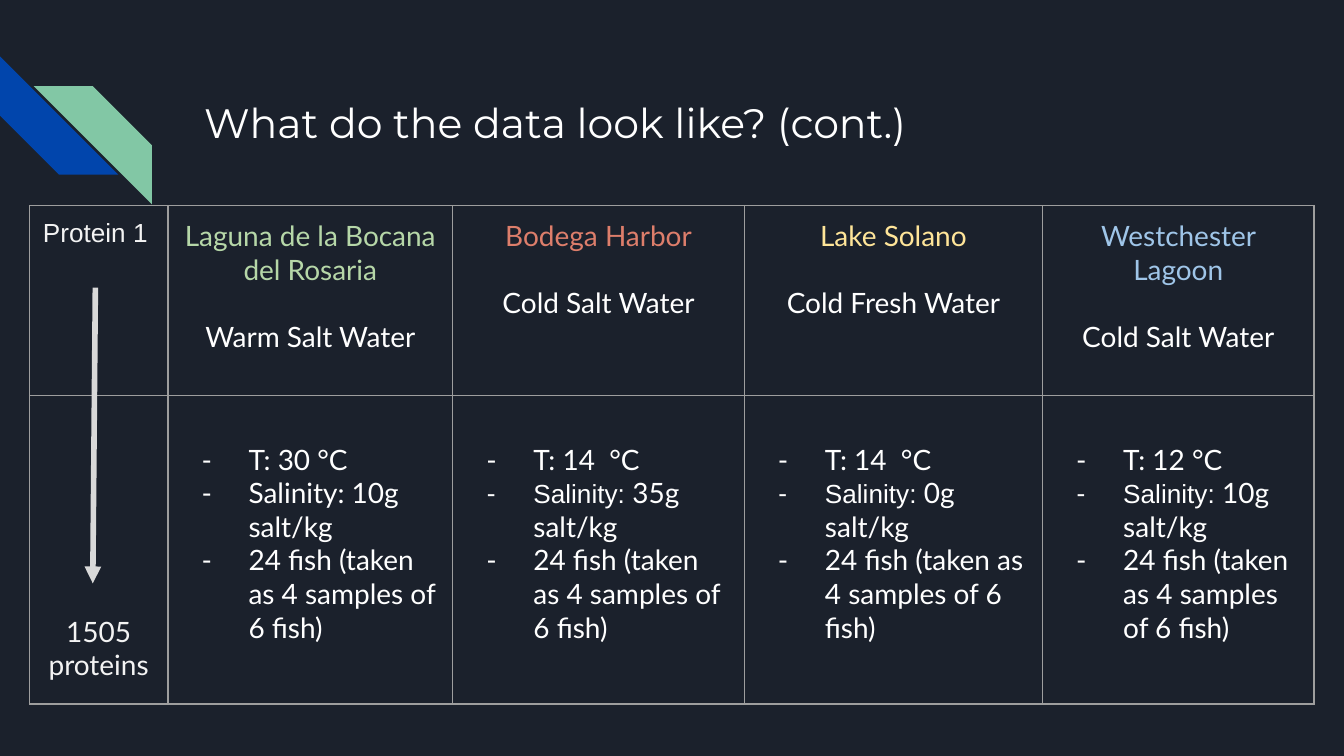
from lxml.etree import SubElement
from pptx import Presentation
from pptx.dml.color import RGBColor
from pptx.enum.shapes import MSO_CONNECTOR as Connector, MSO_SHAPE as Shape
from pptx.enum.text import MSO_ANCHOR as Anchor, MSO_AUTO_SIZE as AutoSize, PP_ALIGN as Align
from pptx.oxml import parse_xml
from pptx.oxml.ns import nsdecls, qn
from pptx.util import Pt

NAVY = RGBColor(0x1B, 0x21, 0x2C)
BLUE = RGBColor(0x01, 0x45, 0xAC)
MINT = RGBColor(0x82, 0xC7, 0xA5)
WHITE = RGBColor(0xFF, 0xFF, 0xFF)
PALE = RGBColor(0xF3, 0xF3, 0xF3)
SILVER = RGBColor(0xD9, 0xD9, 0xD9)
BORDER = RGBColor(0x9E, 0x9E, 0x9E)
GREEN = RGBColor(0xB6, 0xD7, 0xA8)
CORAL = RGBColor(0xDD, 0x7E, 0x6B)
YELLOW = RGBColor(0xFF, 0xE5, 0x99)
SKY = RGBColor(0x9F, 0xC5, 0xE8)

LATO, ARIAL = ("Lato", 15), ("Arial", 14)
TITLE = "What do the data look like? (cont.)"
FIRST_PROTEIN = "Protein 1"
LAST_PROTEIN = "1505 proteins"
SAMPLING = "24 fish (taken as 4 samples of 6 fish)"
SITES = [
    ("Laguna de la Bocana del Rosaria", GREEN, "Warm Salt Water", "T: 30 °C",
     [("Salinity: 10g salt/kg", LATO)]),
    ("Bodega Harbor", CORAL, "Cold Salt Water", "T: 14  °C",
     [("Salinity: ", ARIAL), ("35g salt/kg", LATO)]),
    ("Lake Solano", YELLOW, "Cold Fresh Water", "T: 14  °C",
     [("Salinity:", ARIAL), (" 0g salt/kg", LATO)]),
    ("Westchester Lagoon", SKY, "Cold Salt Water", "T: 12 °C",
     [("Salinity:", ARIAL), (" 10g salt/kg", LATO)]),
]
COLUMN_WIDTHS = [74.2, 152.6, 156.2, 159.8, 145.4]
ROW_HEIGHTS = [101.7, 165.3]
TABLE_LEFT, TABLE_TOP = 15.8, 110.2
INSET, LINE = 7.2, 18
STRIPE = 63.4


def write(paragraph, pieces, color, align=Align.LEFT):
    paragraph.alignment = align
    for text, (family, size) in pieces:
        run = paragraph.add_run()
        run.text = text
        run.font.name, run.font.size = family, Pt(size)
        run.font.color.rgb = color


def add_dash(paragraph):
    props = paragraph._p.get_or_add_pPr()
    props.set("marL", str(Pt(36)))
    props.set("indent", str(-Pt(25.2)))
    dash_color = SubElement(props, qn("a:buClr"))
    SubElement(dash_color, qn("a:srgbClr"), val=str(WHITE))
    SubElement(props, qn("a:buFont"), typeface="Lato")
    SubElement(props, qn("a:buChar"), char="-")


def style_cell(cell):
    cell.fill.background()
    cell.margin_left = cell.margin_right = Pt(INSET)
    cell.margin_top = cell.margin_bottom = Pt(INSET)
    props = cell._tc.get_or_add_tcPr()
    for place, side in enumerate(("lnL", "lnR", "lnT", "lnB")):
        props.insert(place, parse_xml(
            f'<a:{side} {nsdecls("a")} w="{Pt(0.75)}"><a:solidFill>'
            f'<a:srgbClr val="{BORDER}"/></a:solidFill></a:{side}>'))


def add_stripe(slide, left, top, color):
    stripe = slide.shapes.add_shape(
        Shape.DIAGONAL_STRIPE, Pt(left), Pt(top), Pt(STRIPE), Pt(STRIPE))
    stripe.shadow.inherit = False
    stripe.fill.solid()
    stripe.fill.fore_color.rgb = color
    stripe.line.fill.background()
    return stripe


def add_title(slide):
    title = slide.shapes.title
    title.left, title.top, title.width, title.height = Pt(102.2), Pt(41), Pt(421.2), Pt(42.5)
    frame = title.text_frame
    frame.text = TITLE
    frame.word_wrap = True
    frame.auto_size = AutoSize.NONE
    frame.vertical_anchor = Anchor.TOP
    frame.margin_left = frame.margin_right = Pt(INSET)
    frame.margin_top = frame.margin_bottom = Pt(INSET)
    heading = frame.paragraphs[0]
    heading.alignment = Align.LEFT
    heading.line_spacing = 1.15
    heading.space_before = Pt(0)
    font = heading.runs[0].font
    font.name, font.size, font.color.rgb = "Montserrat", Pt(22), WHITE


def add_sites(slide):
    table = slide.shapes.add_table(
        len(ROW_HEIGHTS), len(COLUMN_WIDTHS), Pt(TABLE_LEFT), Pt(TABLE_TOP),
        Pt(sum(COLUMN_WIDTHS)), Pt(sum(ROW_HEIGHTS))).table
    table.first_row = table.horz_banding = False
    for column, width in zip(table.columns, COLUMN_WIDTHS):
        column.width = Pt(width)
    for row, height in zip(table.rows, ROW_HEIGHTS):
        row.height = Pt(height)
    for cell in table.iter_cells():
        style_cell(cell)

    write(table.cell(0, 0).text_frame.paragraphs[0], [(FIRST_PROTEIN, ARIAL)], PALE)
    last = table.cell(1, 0)
    last.vertical_anchor = Anchor.BOTTOM
    last.margin_bottom = Pt(12)
    write(last.text_frame.paragraphs[0], [(LAST_PROTEIN, LATO)], PALE, Align.CENTER)

    for column, (name, color, water, temperature, salinity) in enumerate(SITES, 1):
        header = table.cell(0, column).text_frame
        write(header.paragraphs[0], [(name, LATO)], color, Align.CENTER)
        habitat = header.add_paragraph()
        habitat.space_before = Pt(LINE)
        write(habitat, [(water, LATO)], WHITE, Align.CENTER)

        details = table.cell(1, column)
        details.margin_top = Pt(INSET + LINE)
        frame = details.text_frame
        facts = [[(temperature, LATO)], salinity, [(SAMPLING, LATO)]]
        for index, pieces in enumerate(facts):
            fact = frame.add_paragraph() if index else frame.paragraphs[0]
            write(fact, pieces, WHITE)
            add_dash(fact)


def add_arrow(slide):
    arrow = slide.shapes.add_connector(
        Connector.STRAIGHT, Pt(51.1), Pt(154.1), Pt(49.7), Pt(312.5))
    arrow.line.color.rgb = SILVER
    arrow.line.width = Pt(3)
    SubElement(arrow.line._get_or_add_ln(), qn("a:tailEnd"), type="triangle")
    SubElement(arrow._element.spPr, qn("a:effectLst"))


def main():
    deck = Presentation()
    deck.slide_width, deck.slide_height = Pt(720), Pt(405)
    slide = deck.slides.add_slide(deck.slide_layouts[5])
    slide.background.fill.solid()
    slide.background.fill.fore_color.rgb = NAVY
    add_stripe(slide, 0, 30.2, BLUE).rotation = 270
    mint_stripe = add_stripe(slide, 18, 46.1, MINT)
    mint_stripe._element.spPr.xfrm.set("flipH", "1")
    add_sites(slide)
    add_arrow(slide)
    add_title(slide)
    deck.save("out.pptx")


if __name__ == "__main__":
    main()
